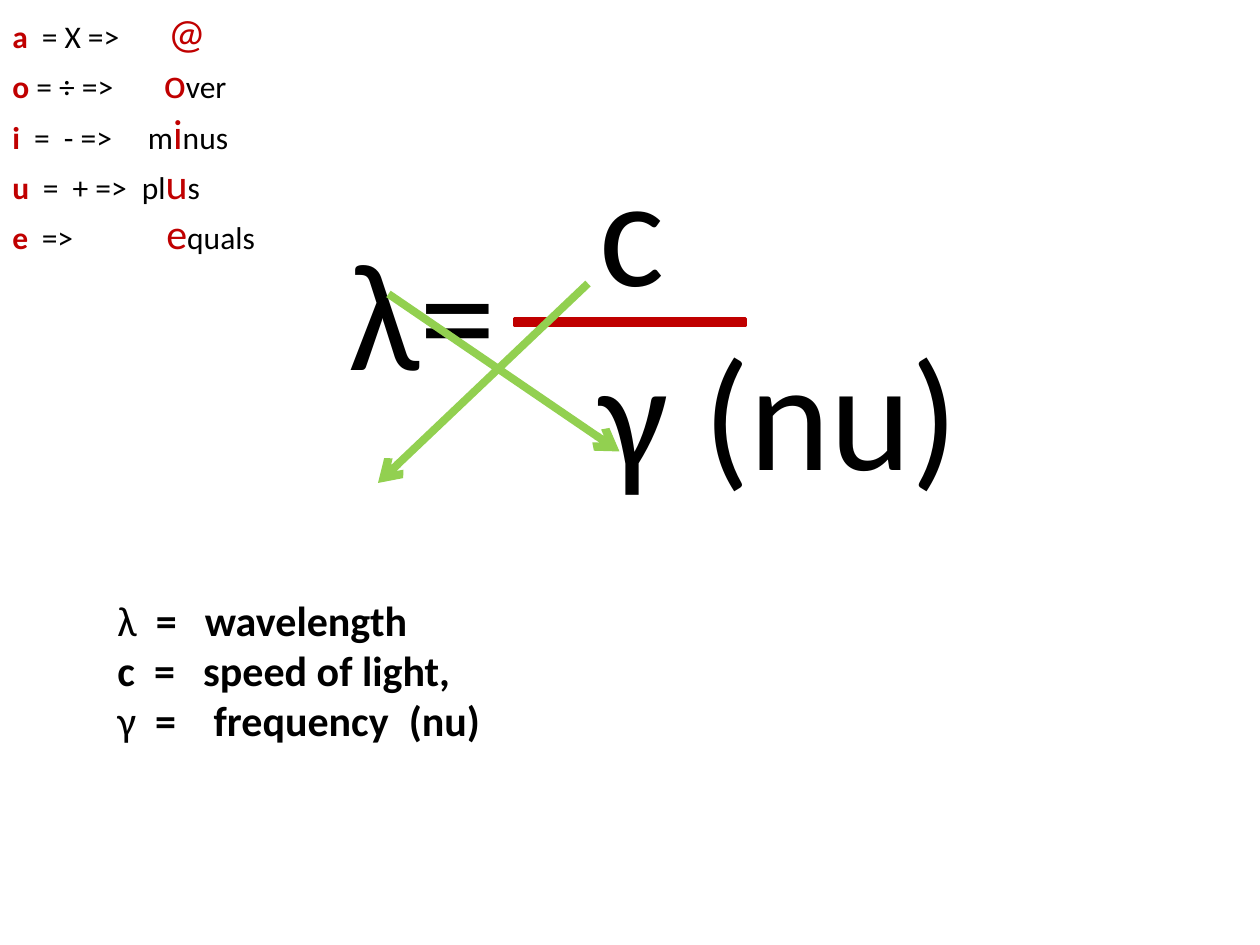
from lxml.etree import SubElement
from pptx import Presentation
from pptx.dml.color import RGBColor
from pptx.enum.shapes import MSO_CONNECTOR, MSO_SHAPE
from pptx.oxml.ns import qn
from pptx.util import Pt

COLORS = {"black": "000000", "red": "C00000", "green": "92D050"}
FONT = "Calibri"
STYLES = {
    "key": (18, "red", True),
    "plain": (18, "black", False),
    "vowel": (24, "red", False),
    "symbol": (24, "black", False),
    "meaning": (24, "black", True),
    "formula": (88, "black", False),
}
MNEMONICS = [
    ((16.8, 89), [("a", "key"), ("\t= X =>\t", "plain"), ("@", "vowel")]),
    ((86.5,), [("o", "key"), (" = ÷ =>\t", "plain"), ("o", "vowel"), ("ver", "plain")]),
    ((12.5, 29.5, 77.5), [("i", "key"), ("\t=\t- =>\tm", "plain"), ("i", "vowel"), ("nus", "plain")]),
    ((17.5, 34.5, 74), [("u", "key"), ("\t=\t+ =>\tpl", "plain"), ("u", "vowel"), ("s", "plain")]),
    ((16.8, 88), [("e", "key"), ("\t=>\t", "plain"), ("e", "vowel"), ("quals", "plain")]),
]
LEGEND = [
    ((22, 50), [("λ", "symbol"), ("\t=\twavelength", "meaning")]),
    ((21, 49), [("c\t=\tspeed of light,", "meaning")]),
    ((21.5, 55, 166.5), [("γ", "symbol"), ("\t=\tfrequency\t(nu)", "meaning")]),
]


def color(name):
    return RGBColor.from_string(COLORS[name])


def set_tab_stops(paragraph, stops):
    if stops:
        properties = paragraph._p.get_or_add_pPr()
        tab_list = SubElement(properties, qn("a:tabLst"))
        for stop in stops:
            SubElement(tab_list, qn("a:tab"), pos=str(Pt(stop)), algn="l")


def add_text(shapes, box, rows):
    text_frame = shapes.add_textbox(*map(Pt, box)).text_frame
    text_frame.word_wrap = True
    for index, (stops, pieces) in enumerate(rows):
        paragraph = text_frame.add_paragraph() if index else text_frame.paragraphs[0]
        set_tab_stops(paragraph, stops)
        for text, style in pieces:
            run = paragraph.add_run()
            run.text = text
            size, color_name, bold = STYLES[style]
            run.font.name = FONT
            run.font.size = Pt(size)
            run.font.bold = bold
            run.font.color.rgb = color(color_name)


def add_equation(slide, box):
    left, top, width, height = box
    shapes = slide.shapes.add_group_shape().shapes
    add_text(shapes, (left, top + 48, 138, 114), [((), [("λ=", "formula")])])
    add_text(
        shapes,
        (left + 143.5, top, width - 143.5, height),
        [((), [("c", "formula")]), ((), [("γ (nu)", "formula")])],
    )
    bar = shapes.add_shape(
        MSO_SHAPE.RECTANGLE, Pt(left + 102), Pt(top + 110), Pt(132), Pt(3.6)
    )
    bar.shadow.inherit = False
    bar.fill.solid()
    bar.fill.fore_color.rgb = color("red")
    bar.line.color.rgb = color("red")
    bar.line.width = Pt(2)


def add_cross_arrows(slide, box):
    left, top, width, height = box
    arrows = [
        (left + 6, top + 6, left + width, top + height - 18),
        (left + width - 18, top, left, top + height),
    ]
    for points in arrows:
        connector = slide.shapes.add_connector(MSO_CONNECTOR.STRAIGHT, *map(Pt, points))
        connector.line.color.rgb = color("green")
        connector.line.width = Pt(4.5)
        SubElement(connector.line._get_or_add_ln(), qn("a:tailEnd"), type="arrow")
        SubElement(connector._element.spPr, qn("a:effectLst"))


def main():
    presentation = Presentation()
    presentation.slide_width = Pt(720)
    presentation.slide_height = Pt(540)
    slide = presentation.slides.add_slide(presentation.slide_layouts[6])
    add_text(slide.shapes, (0, 0, 540, 152.6), MNEMONICS)
    add_equation(slide, (192, 72, 450, 240.5))
    add_cross_arrows(slide, (216, 162, 138, 114))
    add_text(slide.shapes, (60, 336, 444, 94.5), LEGEND)
    presentation.save("out.pptx")


if __name__ == "__main__":
    main()
